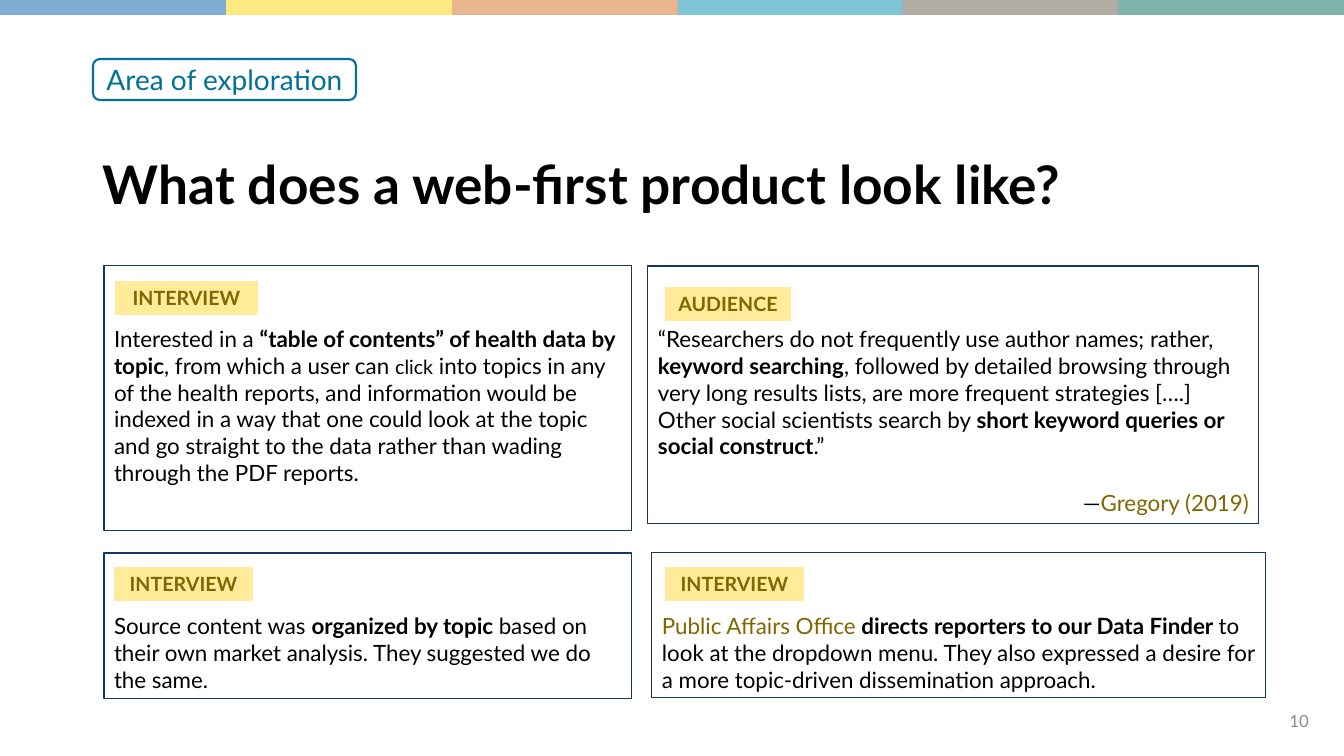
from dataclasses import dataclass

from lxml.etree import SubElement
from pptx import Presentation
from pptx.dml.color import RGBColor
from pptx.enum.shapes import MSO_SHAPE
from pptx.enum.text import MSO_ANCHOR, MSO_AUTO_SIZE, PP_ALIGN
from pptx.oxml.ns import qn
from pptx.util import Pt

SCALE = 914400 / 100.8


@dataclass(frozen=True)
class Theme:
    """Colours, type sizes and font of the deck."""
    font: str = "Lato"
    ink: str = "000000"
    white: str = "FFFFFF"
    teal: str = "007297"
    navy: str = "13356A"
    gold: str = "806700"
    pale_gold: str = "FFEB99"
    grey: str = "8C8C8C"
    stripes: tuple = ("005DAA", "FFD200", "D06F1A", "008BB0", "675C48", "006858")
    title: int = 38
    topic: int = 20
    body: int = 16
    small: int = 14
    number: int = 12


T = Theme()


def px(n):
    """Turn pixels into EMU."""
    return round(n * SCALE)


def add_text(tf, text, size=T.body, color=T.ink, bold=False, align=PP_ALIGN.LEFT,
             anchor=MSO_ANCHOR.MIDDLE, top=0, before=0, spacing=None, new=False):
    """Write one paragraph from a string or from (text, overrides) runs."""
    tf.word_wrap = True
    tf.auto_size = MSO_AUTO_SIZE.NONE
    tf.vertical_anchor = anchor
    tf.margin_left = tf.margin_right = px(10)
    tf.margin_top, tf.margin_bottom = px(top), 0
    p = tf.add_paragraph() if new else tf.paragraphs[0]
    p.alignment = align
    p.space_before = Pt(before)
    p.line_spacing = spacing
    for words, style in [(text, {})] if isinstance(text, str) else text:
        r = p.add_run()
        r.text = words
        r.font.name = T.font
        r.font.size = Pt(style.get("size", size))
        r.font.bold = style.get("bold", bold)
        r.font.color.rgb = RGBColor.from_string(style.get("color", color))


def add_box(s, box, fill, line=None, width=0.75, kind=MSO_SHAPE.RECTANGLE):
    """Add a flat filled shape with an optional outline."""
    sp = s.shapes.add_shape(kind, *map(px, box))
    sp.shadow.inherit = False
    sp.fill.solid()
    sp.fill.fore_color.rgb = RGBColor.from_string(fill)
    if line:
        sp.line.color.rgb = RGBColor.from_string(line)
        sp.line.width = Pt(width)
    else:
        sp.line.fill.background()
    return sp


def add_stripes(s, box):
    """Draw the half-transparent colour band in the given box."""
    x, y, w, h = box
    edges = [x, x + 226, x + 452, x + 678, x + 903, x + 1118, x + w]
    for color, left, right in zip(T.stripes, edges, edges[1:]):
        sp = add_box(s, (left, y, right - left, h), color)
        clr = sp.fill._xPr.find(qn("a:solidFill"))[0]
        SubElement(clr, qn("a:alpha")).set("val", "50000")


def add_header(s, box):
    """Place the topic label and the slide title in the given box."""
    x, y, w, h = box
    sp = add_box(s, (x, y, 263, 41), T.white, T.teal, 1.5, MSO_SHAPE.ROUNDED_RECTANGLE)
    add_text(sp.text_frame, "Area of exploration", size=T.topic, color=T.teal,
             align=PP_ALIGN.CENTER)
    title = s.shapes.title
    title.left, title.top, title.width, title.height = map(px, (x, y + 55, w, h - 55))
    add_text(title.text_frame, "What does a web-first product look like?",
             size=T.title, bold=True, spacing=0.9)


def add_panel(s, box, tag, tag_box, runs, source=None):
    """Place an outlined finding with its tag and an optional source line."""
    x, y, w, h = box
    dx, dy, tag_w = tag_box
    tf = add_box(s, box, T.white, T.navy).text_frame
    add_text(tf, runs, anchor=MSO_ANCHOR.TOP, top=59)
    if source:
        add_text(tf, source, anchor=MSO_ANCHOR.TOP, top=59, before=21.6,
                 align=PP_ALIGN.RIGHT, new=True)
    sp = add_box(s, (x + dx, y + dy, tag_w, 34), T.pale_gold)
    add_text(sp.text_frame, tag, size=T.small, color=T.gold, bold=True,
             align=PP_ALIGN.CENTER)


def add_number(s, box, number):
    """Place the page number in the given box."""
    tf = s.shapes.add_textbox(*map(px, box)).text_frame
    add_text(tf, number, size=T.number, color=T.grey, align=PP_ALIGN.RIGHT)


BOLD = {"bold": True}
GOLD = {"color": T.gold}
PANELS = [
    ((104, 266, 528, 265), "INTERVIEW", (11, 15, 143), [
        ("Interested in a ", {}),
        ("“table of contents” of health data by topic", BOLD),
        (", from which a user can ", {}),
        ("click", {"size": T.small}),
        (" into topics in any of the health reports, and information would be indexed "
         "in a way that one could look at the topic and go straight to the data rather "
         "than wading through the PDF reports.", {})]),
    ((648, 266, 611, 258), "AUDIENCE", (17, 21, 126), [
        ("“Researchers do not frequently use author names; rather, ", {}),
        ("keyword searching", BOLD),
        (", followed by detailed browsing through very long results lists, are more "
         "frequent strategies [….] Other social scientists search by ", {}),
        ("short keyword queries or social construct", BOLD),
        (".”", {})],
     [("—", {}), ("Gregory (2019)", GOLD)]),
    ((104, 553, 528, 146), "INTERVIEW", (10, 14, 139), [
        ("Source content was ", {}),
        ("organized by topic ", BOLD),
        ("based on their own market analysis. They suggested we do the same.", {})]),
    ((652, 553, 614, 145), "INTERVIEW", (13, 14, 139), [
        ("Public Affairs Office ", GOLD),
        ("directs reporters to our Data Finder ", BOLD),
        ("to look at the dropdown menu. They also expressed a desire for a more "
         "topic-driven dissemination approach.", {})]),
]


def main():
    """Build and save the slide."""
    prs = Presentation()
    prs.slide_width, prs.slide_height = px(1344), px(756)
    s = prs.slides.add_slide(prs.slide_layouts[5])
    add_stripes(s, (0, 0, 1344, 15))
    add_header(s, (93, 59, 1159, 201))
    for panel in PANELS:
        add_panel(s, *panel)
    add_number(s, (1017, 701, 302, 40), "10")
    prs.save("out.pptx")


if __name__ == "__main__":
    main()
